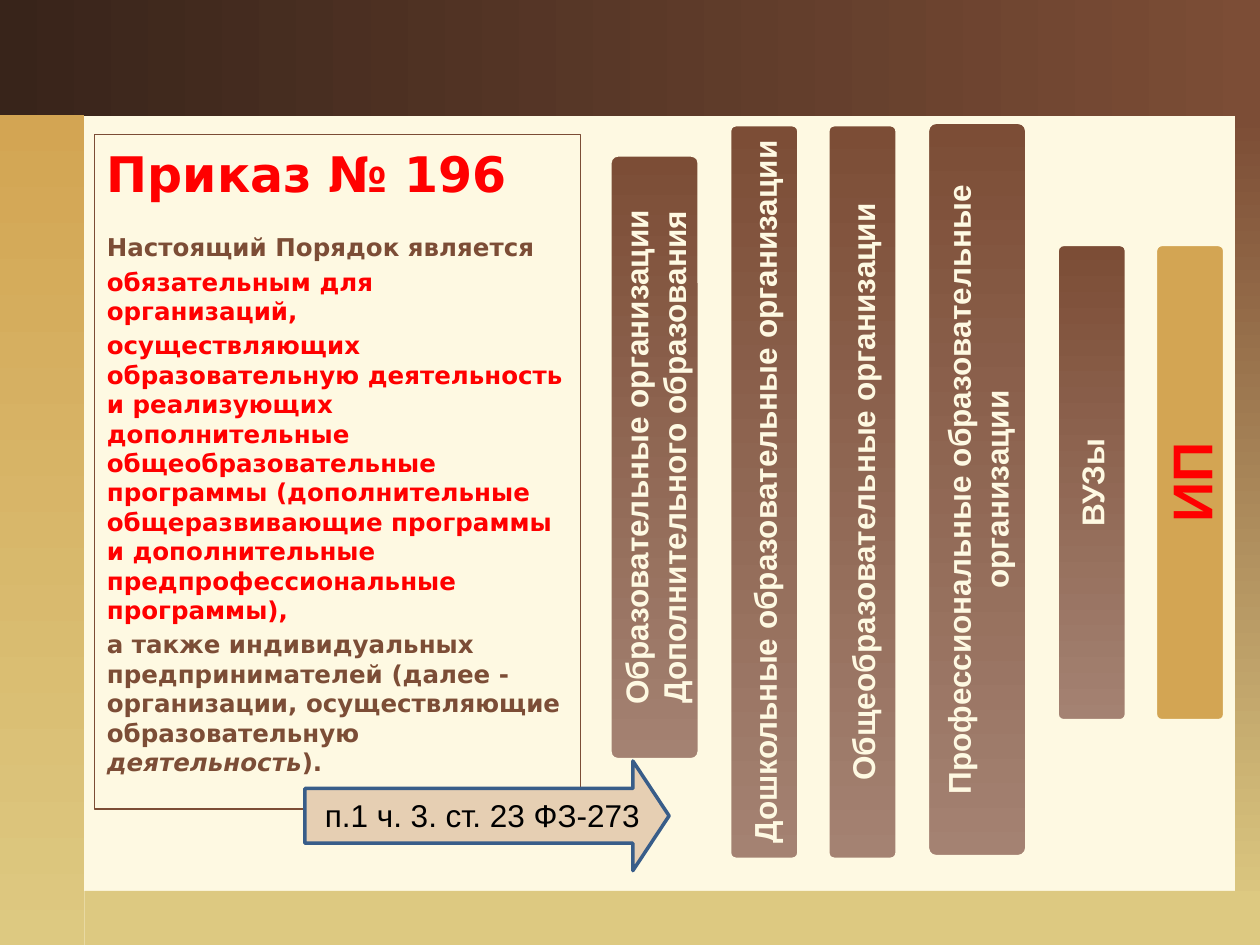
"""Build the slide on who must follow Order No. 196."""
import pptx
import pptx.util
import pptx.dml.color
import pptx.enum.shapes
import pptx.enum.text

Inches, Pt = pptx.util.Inches, pptx.util.Pt
KIND = pptx.enum.shapes.MSO_SHAPE
ALIGN = pptx.enum.text.PP_ALIGN
ANCHOR = pptx.enum.text.MSO_ANCHOR

HUES = {
    "cream": "FEF9E2", "brown": "7C4D36", "dark": "38241A", "mauve": "A48272",
    "gold": "D3A553", "sand": "DDC981", "red": "FF0000", "black": "000000",
    "peach": "E6CFB3", "blue": "385D89",
}

BANDS = [
    ((0, -0.01, 10, 0.93), ("dark", "brown"), 0),
    ((9.8, 0.91, 0.2, 6.38), ("brown", "sand"), 270),
    ((0, 0.91, 0.67, 6.6), ("gold", "sand"), 270),
    ((0.67, 7.07, 9.33, 0.44), ("sand",), 0),
]

ORDER = [
    ([("Приказ № 196", False)], 28, "red", 0),
    ([("Настоящий Порядок является", False)], 14, "brown", 17),
    ([("обязательным для организаций,", False)], 14, "red", 2.8),
    ([("осуществляющих образовательную деятельность и реализующих "
       "дополнительные общеобразовательные программы (дополнительные "
       "общеразвивающие программы и дополнительные предпрофессиональные "
       "программы),", False)], 14, "red", 2.8),
    ([("а также индивидуальных предпринимателей (далее - организации, "
       "осуществляющие образовательную ", False),
      ("деятельность", True), (").", False)], 14, "brown", 2.8),
]

PLAIN = {"fill": ("brown", "mauve"), "size": 18, "hue": "cream"}
SOLO = {"fill": ("gold",), "size": 32, "hue": "red"}
BARS = [
    ((4.84, 1.23, 0.71, 4.8),
     ["Образовательные организации", "Дополнительного образования"], PLAIN),
    ((5.79, 0.99, 0.55, 5.83), ["Дошкольные образовательные организации"], PLAIN),
    ((6.57, 0.99, 0.55, 5.83), ["Общеобразовательные организации"], PLAIN),
    ((7.36, 0.97, 0.79, 5.83),
     ["Профессиональные образовательные", "организации"], PLAIN),
    ((8.39, 1.94, 0.55, 3.78), ["ВУЗы"], PLAIN),
    ((9.17, 1.94, 0.55, 3.78), ["ИП"], SOLO),
]


def tint(name):
    return pptx.dml.color.RGBColor.from_string(HUES[name])


def paint(fill, hues, angle=270):
    if not hues:
        fill.background()
    elif len(hues) == 1:
        fill.solid()
        fill.fore_color.rgb = tint(hues[0])
    else:
        fill.gradient()
        fill.gradient_angle = angle
        for stop, hue, place in zip(fill.gradient_stops, hues, (0, 1)):
            stop.color.rgb = tint(hue)
            stop.position = place


def draw(slide, kind, box, hues=(), angle=270, line=None, width=2):
    shape = slide.shapes.add_shape(kind, *map(Inches, box))
    shape.shadow.inherit = False
    paint(shape.fill, hues, angle)
    if line:
        shape.line.color.rgb = tint(line)
        shape.line.width = Pt(width)
    else:
        shape.line.fill.background()
    return shape


def write(para, text, font="Arial", size=18, hue="black", bold=False,
          slant=False, align=ALIGN.LEFT, before=0):
    para.alignment = align
    para.space_before = Pt(before)
    run = para.add_run()
    run.text = text
    run.font.name = font
    run.font.size = Pt(size)
    run.font.bold = bold
    run.font.italic = slant
    run.font.color.rgb = tint(hue)


def lines(frame, count):
    for _ in range(count - 1):
        frame.add_paragraph()
    return frame.paragraphs


def add_order(slide):
    panel = draw(slide, KIND.RECTANGLE, (0.75, 1.07, 3.86, 5.35),
                 line="brown", width=0.75)
    frame = panel.text_frame
    frame.word_wrap = True
    frame.vertical_anchor = ANCHOR.TOP
    frame.margin_top = Inches(0.07)
    for para, (runs, size, hue, gap) in zip(lines(frame, len(ORDER)), ORDER):
        for text, slant in runs:
            write(para, text, font="DejaVu Sans", size=size, hue=hue,
                  bold=True, slant=slant, before=gap)


def add_bar(slide, box, texts, style):
    bar = draw(slide, KIND.ROUNDED_RECTANGLE, box, style["fill"], line="cream")
    bar.adjustments[0] = 0.09
    frame = bar.text_frame
    frame.word_wrap = False
    frame.vertical_anchor = ANCHOR.MIDDLE
    frame._txBody.bodyPr.set("vert", "vert270")
    for para, text in zip(lines(frame, len(texts)), texts):
        write(para, text, size=style["size"], hue=style["hue"], bold=True,
              align=ALIGN.CENTER)


def add_arrow(slide):
    arrow = draw(slide, KIND.RIGHT_ARROW, (2.42, 6.04, 2.89, 0.87),
                 ("peach",), line="blue")
    arrow.adjustments[0] = 0.5
    arrow.adjustments[1] = 0.33
    label = slide.shapes.add_textbox(*map(Inches, (2.48, 6.27, 2.72, 0.4)))
    label.text_frame.word_wrap = False
    write(label.text_frame.paragraphs[0], "п.1 ч. 3. ст. 23 ФЗ-273")


def main():
    deck = pptx.Presentation()
    deck.slide_width, deck.slide_height = Inches(10), Inches(7.5)
    slide = deck.slides.add_slide(deck.slide_layouts[6])
    paint(slide.background.fill, ("cream",))
    for box, hues, angle in BANDS:
        draw(slide, KIND.RECTANGLE, box, hues, angle)
    add_order(slide)
    add_bar(slide, *BARS[0])
    add_arrow(slide)
    for bar in BARS[1:]:
        add_bar(slide, *bar)
    deck.save("out.pptx")


if __name__ == "__main__":
    main()
